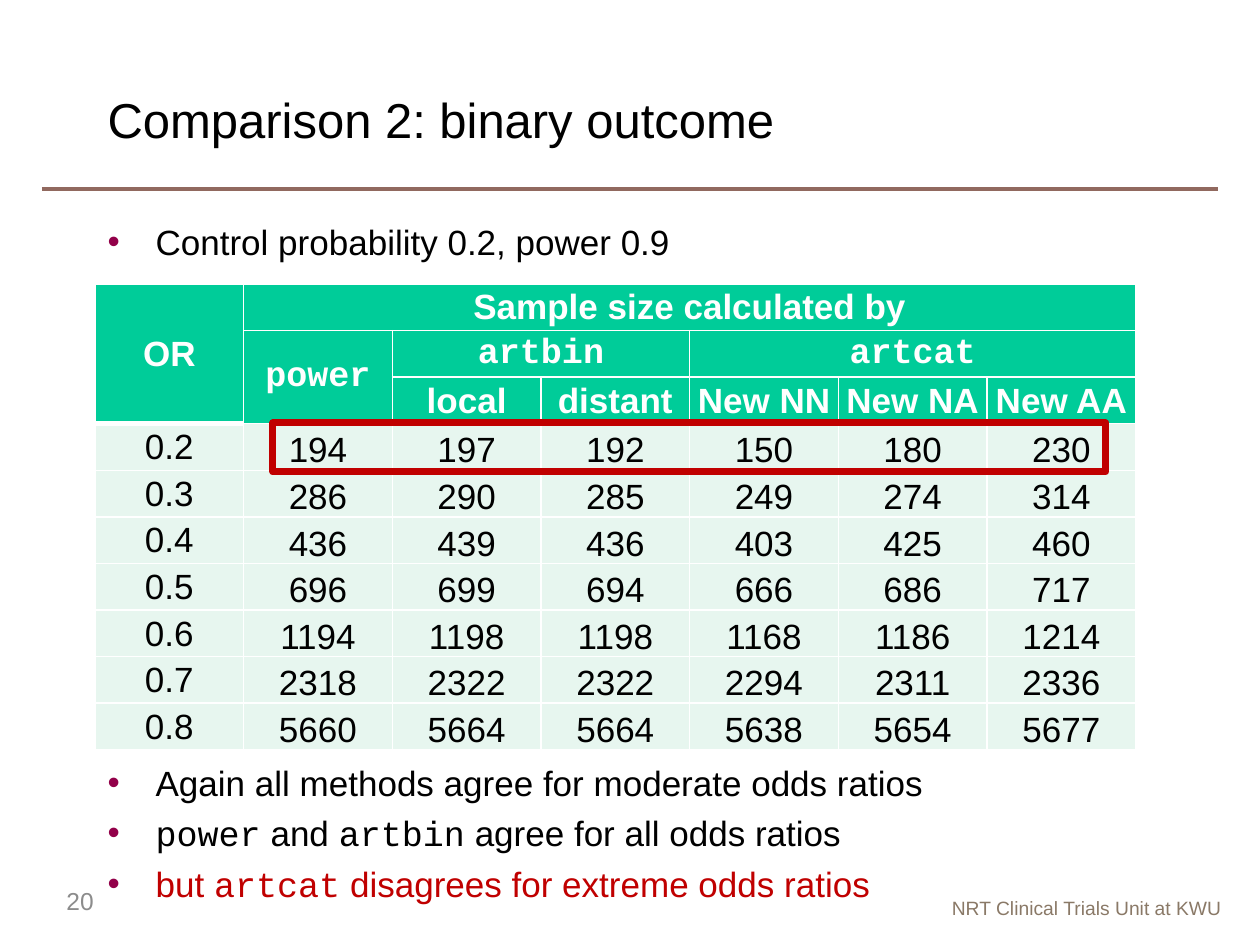
from dataclasses import dataclass

from lxml import etree
from pptx import Presentation
from pptx.dml.color import RGBColor
from pptx.enum.shapes import MSO_CONNECTOR, MSO_SHAPE
from pptx.enum.text import MSO_ANCHOR, MSO_AUTO_SIZE, PP_ALIGN
from pptx.oxml.ns import qn
from pptx.util import Emu, Pt

LEFT, CENTER, RIGHT = PP_ALIGN.LEFT, PP_ALIGN.CENTER, PP_ALIGN.RIGHT
TOP, MIDDLE, BOTTOM = MSO_ANCHOR.TOP, MSO_ANCHOR.MIDDLE, MSO_ANCHOR.BOTTOM
NO_FIT = MSO_AUTO_SIZE.NONE
STRAIGHT, RECTANGLE = MSO_CONNECTOR.STRAIGHT, MSO_SHAPE.RECTANGLE
SCALE = 914400 / 126
SANS, MONO = "Arial", "Courier New"
BLACK, WHITE, RED = "000000", "FFFFFF", "C00000"
GREEN, PALE, PLUM, BROWN = "00CC99", "E7F6EF", "920049", "91695F"


@dataclass
class Run:
    text: str
    size: int = 20
    font: str = SANS
    color: str = BLACK
    bold: bool = False


@dataclass
class Bullet:
    runs: list[Run]
    before: int = 5


@dataclass
class Header:
    row: int
    col: int
    text: str
    rows: int = 1
    cols: int = 1
    font: str = SANS


HEADERS = [
    Header(0, 0, "OR", rows=3),
    Header(0, 1, "Sample size calculated by", cols=6),
    Header(1, 1, "power", rows=2, font=MONO),
    Header(1, 2, "artbin", cols=2, font=MONO),
    Header(1, 4, "artcat", cols=3, font=MONO),
    Header(2, 2, "local"),
    Header(2, 3, "distant"),
    Header(2, 4, "New NN"),
    Header(2, 5, "New NA"),
    Header(2, 6, "New AA"),
]
SAMPLE_SIZES = [
    ("0.2", 194, 197, 192, 150, 180, 230),
    ("0.3", 286, 290, 285, 249, 274, 314),
    ("0.4", 436, 439, 436, 403, 425, 460),
    ("0.5", 696, 699, 694, 666, 686, 717),
    ("0.6", 1194, 1198, 1198, 1168, 1186, 1214),
    ("0.7", 2318, 2322, 2322, 2294, 2311, 2336),
    ("0.8", 5660, 5664, 5664, 5638, 5654, 5677),
]
HEADER_ROWS = 3
THICK_EDGES = {(0, 0, "B"), (HEADER_ROWS, 0, "T")}
BULLETS = [
    Bullet([Run("Control probability 0.2, power 0.9")]),
    Bullet([Run("Again all methods agree for moderate odds ratios")], before=285),
    Bullet([Run("power", font=MONO), Run(" and "), Run("artbin", font=MONO),
            Run(" agree for all odds ratios")]),
    Bullet([Run("but ", color=RED), Run("artcat", font=MONO, color=RED),
            Run(" disagrees for extreme odds ratios", color=RED)]),
]


def px(n: int) -> Emu:
    return Emu(round(n * SCALE))


def rgb(color: str) -> RGBColor:
    return RGBColor.from_string(color)


def add_run(p, run: Run) -> None:
    r = p.add_run()
    r.text = run.text
    f = r.font
    f.size, f.name, f.bold = Pt(run.size), run.font, run.bold
    f.color.rgb = rgb(run.color)


def place(s, x: int, y: int, w: int, h: int, anchor: MSO_ANCHOR):
    s.left, s.top, s.width, s.height = px(x), px(y), px(w), px(h)
    tf = s.text_frame
    tf.word_wrap, tf.auto_size, tf.vertical_anchor = True, NO_FIT, anchor
    return tf


def add_label(s, box: tuple[int, int, int, int], run: Run,
              align: PP_ALIGN, anchor: MSO_ANCHOR) -> None:
    p = place(s, *box, anchor).paragraphs[0]
    p.alignment = align
    add_run(p, run)


def add_bullet(p, bullet: Bullet) -> None:
    p.space_before = Pt(bullet.before)
    p.alignment = LEFT
    pPr = p._p.get_or_add_pPr()
    pPr.set("marL", str(px(48)))
    pPr.set("indent", str(-px(48)))
    color = etree.SubElement(pPr, qn("a:buClr"))
    etree.SubElement(color, qn("a:srgbClr"), val=PLUM)
    etree.SubElement(pPr, qn("a:buFont"), typeface=SANS)
    etree.SubElement(pPr, qn("a:buChar"), char="•")
    for run in bullet.runs:
        add_run(p, run)


def format_cell(cell, row: int, col: int) -> None:
    tcPr = cell._tc.get_or_add_tcPr()
    for side in "LRTB":
        width = Pt(3 if (row, col, side) in THICK_EDGES else 1)
        ln = etree.SubElement(tcPr, qn(f"a:ln{side}"), w=str(width))
        fill = etree.SubElement(ln, qn("a:solidFill"))
        etree.SubElement(fill, qn("a:srgbClr"), val=WHITE)
    cell.fill.solid()
    cell.fill.fore_color.rgb = rgb(GREEN if row < HEADER_ROWS else PALE)
    cell.margin_left = cell.margin_right = cell.margin_top = px(1)
    cell.margin_bottom = 0


def write_cell(cell, run: Run, anchor: MSO_ANCHOR) -> None:
    cell.vertical_anchor = anchor
    p = cell.text_frame.paragraphs[0]
    p.alignment = CENTER
    add_run(p, run)


def add_sample_table(sp) -> None:
    rows, cols = HEADER_ROWS + len(SAMPLE_SIZES), len(SAMPLE_SIZES[0])
    table = sp.add_table(rows, cols, px(95), px(284), px(1041), px(466)).table
    for row in range(rows):
        for col in range(cols):
            format_cell(table.cell(row, col), row, col)
    for h in HEADERS:
        cell = table.cell(h.row, h.col)
        if h.rows > 1 or h.cols > 1:
            cell.merge(table.cell(h.row + h.rows - 1, h.col + h.cols - 1))
        write_cell(cell, Run(h.text, font=h.font, color=WHITE, bold=True), MIDDLE)
    for row, values in enumerate(SAMPLE_SIZES, HEADER_ROWS):
        for col, value in enumerate(values):
            write_cell(table.cell(row, col), Run(str(value)), BOTTOM if col else MIDDLE)


def add_rule(sp, x1: int, x2: int, y: int) -> None:
    s = sp.add_connector(STRAIGHT, px(x1), px(y), px(x2), px(y))
    s.line.color.rgb = rgb(BROWN)
    s.line.width = Pt(1.75)
    etree.SubElement(s._element.spPr, qn("a:effectLst"))


def add_highlight(sp, x: int, y: int, w: int, h: int) -> None:
    s = sp.add_shape(RECTANGLE, px(x), px(y), px(w), px(h))
    s.shadow.inherit = False
    s.fill.background()
    s.line.color.rgb = rgb(RED)
    s.line.width = Pt(4)


def main() -> None:
    prs = Presentation()
    prs.slide_width, prs.slide_height = px(1260), px(945)
    slide = prs.slides.add_slide(prs.slide_layouts[1])
    sp = slide.shapes
    add_rule(sp, 42, 1218, 189)
    add_label(sp.add_textbox(0, 0, 0, 0), (814, 890, 420, 37),
              Run("NRT Clinical Trials Unit at KWU", 11, color="8A7967"), RIGHT, TOP)
    add_label(sp.title, (95, 63, 1079, 112),
              Run("Comparison 2: binary outcome", 28), LEFT, MIDDLE)
    tf = place(slide.placeholders[1], 95, 214, 1071, 625, TOP)
    for i, bullet in enumerate(BULLETS):
        add_bullet(tf.add_paragraph() if i else tf.paragraphs[0], bullet)
    add_sample_table(sp)
    add_label(sp.add_textbox(0, 0, 0, 0), (54, 876, 284, 50),
              Run("20", 14, color="8C8C8C"), LEFT, MIDDLE)
    add_highlight(sp, 273, 423, 833, 49)
    prs.save("out.pptx")


if __name__ == "__main__":
    main()
